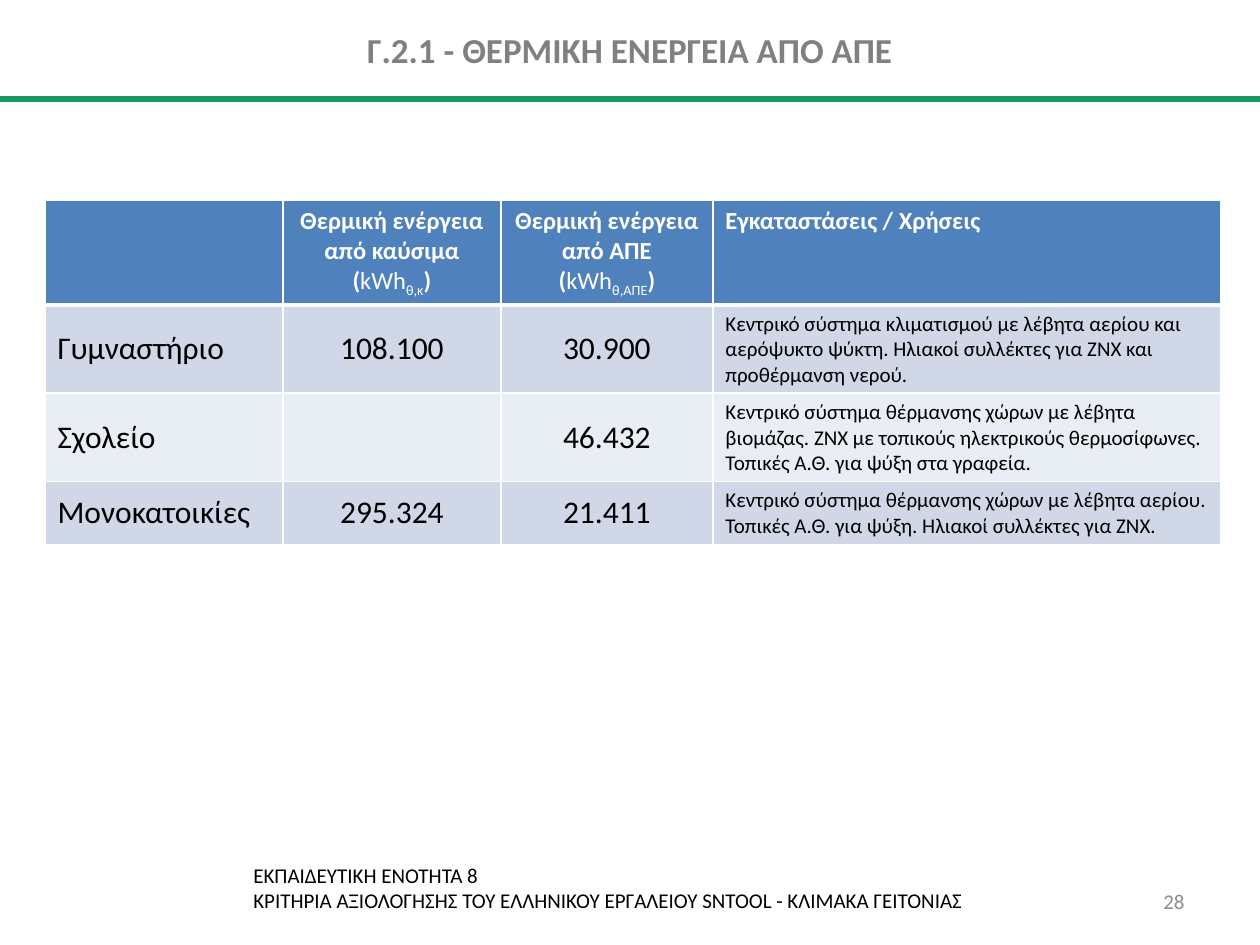
from lxml import etree
from pptx import Presentation
from pptx.dml.color import RGBColor as Rgb
from pptx.enum.shapes import MSO_CONNECTOR as Conn
from pptx.enum.text import MSO_ANCHOR as Anchor, PP_ALIGN as Align
from pptx.oxml.ns import qn
from pptx.util import Pt

PX = 914400 / 126
FONT = "Calibri"
HUES = {
    "green": "159961", "grey": "808080", "pale": "8C8C8C", "black": "000000",
    "white": "FFFFFF", "head": "4F81BD", "odd": "D0D8E8", "even": "E9EDF4",
}


def emu(px):
    return round(px * PX)


def hue(name):
    return Rgb.from_string(HUES[name])


class Deck:
    def __init__(self, wide, high):
        self.prs = Presentation()
        self.prs.slide_width, self.prs.slide_height = emu(wide), emu(high)
        self.slide = self.prs.slides.add_slide(self.prs.slide_layouts[6])

    def run(self, para, text, size, color, bold=False, base=0):
        run = para.add_run()
        run.text = text
        font = run.font
        font.name, font.size, font.bold = FONT, Pt(size), bold
        font.color.rgb = hue(color)
        if base:
            run._r.get_or_add_rPr().set("baseline", str(base * 1000))

    def text(self, box, lines, size, color, bold=False,
             align=Align.LEFT, anchor=Anchor.TOP):
        frame = self.slide.shapes.add_textbox(*map(emu, box)).text_frame
        frame.word_wrap = True
        frame.vertical_anchor = anchor
        para = frame.paragraphs[0]
        para.alignment = align
        for i, line in enumerate(lines):
            if i:
                para.add_line_break()
            self.run(para, line, size, color, bold)

    def line(self, x1, y1, x2, y2, color, width):
        line = self.slide.shapes.add_connector(
            Conn.STRAIGHT, *map(emu, (x1, y1, x2, y2)))
        line.line.color.rgb = hue(color)
        line.line.width = Pt(width)
        etree.SubElement(line._element.spPr, qn("a:effectLst"))

    def edges(self, cell, color, widths):
        props = cell._tc.get_or_add_tcPr()
        for i, (side, width) in enumerate(zip("LRTB", widths)):
            edge = etree.Element(qn(f"a:ln{side}"), w=str(Pt(width)))
            fill = etree.SubElement(edge, qn("a:solidFill"))
            etree.SubElement(fill, qn("a:srgbClr"), val=HUES[color])
            props.insert(i, edge)

    def cell(self, cell, runs, fill, widths, align, anchor):
        cell.fill.solid()
        cell.fill.fore_color.rgb = hue(fill)
        self.edges(cell, "white", widths)
        cell.vertical_anchor = anchor
        para = cell.text_frame.paragraphs[0]
        para.alignment = align
        for run in runs:
            self.run(para, *run)

    def table(self, left, top, cols, rows, heads, body):
        grid = self.slide.shapes.add_table(
            len(rows), len(cols),
            *map(emu, (left, top, sum(cols), sum(rows)))).table
        for col, wide in zip(grid.columns, cols):
            col.width = emu(wide)
        for row, high in zip(grid.rows, rows):
            row.height = emu(high)
        aligns = [Align.LEFT, Align.CENTER, Align.CENTER, Align.LEFT]
        last = len(cols) - 1
        # Header row, with a thick rule below
        for c, runs in enumerate(heads):
            self.cell(grid.cell(0, c), runs, "head", (1, 1, 1, 3),
                      aligns[c], Anchor.TOP)
        # Banded body rows
        for r, texts in enumerate(body, 1):
            fill = "odd" if r % 2 else "even"
            widths = (1, 1, 3 if r == 1 else 1, 1)
            for c, text in enumerate(texts):
                size = 12 if c == last else 18
                runs = [(text, size, "black")] if text else []
                self.cell(grid.cell(r, c), runs, fill, widths, aligns[c],
                          Anchor.TOP if c == last else Anchor.MIDDLE)


def head(text):
    return (text, 14, "white", True)


def energy(source, sub):
    return [head(f"Θερμική ενέργεια από {source} ("),
            ("kWh", 14, "white"), (sub, 14, "white", False, -25), head(")")]


def main():
    deck = Deck(1260, 945)

    # Rule and footer
    deck.line(0, 99, 1260, 99, "green", 3)
    deck.text((241, 856, 856, 63), [
        "ΕΚΠΑΙΔΕΥΤΙΚΗ ΕΝΟΤΗΤΑ 8",
        "ΚΡΙΤΗΡΙΑ ΑΞΙΟΛΟΓΗΣΗΣ ΤΟΥ ΕΛΛΗΝΙΚΟΥ ΕΡΓΑΛΕΙΟΥ SNTOOL - ΚΛΙΜΑΚΑ ΓΕΙΤΟΝΙΑΣ",
    ], 12, "black")
    deck.text((1113, 876, 84, 50), ["28"], 12, "pale",
              align=Align.RIGHT, anchor=Anchor.MIDDLE)

    # Energy table
    heads = [[], energy("καύσιμα", "θ,κ"), energy("ΑΠΕ", "θ,ΑΠΕ"),
             [head("Εγκαταστάσεις / Χρήσεις")]]
    body = [
        ("Γυμναστήριο", "108.100", "30.900",
         "Κεντρικό σύστημα κλιματισμού με λέβητα αερίου και αερόψυκτο ψύκτη. "
         "Ηλιακοί συλλέκτες για ΖΝΧ και προθέρμανση νερού."),
        ("Σχολείο", "", "46.432",
         "Κεντρικό σύστημα θέρμανσης χώρων με λέβητα βιομάζας. "
         "ΖΝΧ με τοπικούς ηλεκτρικούς θερμοσίφωνες. "
         "Τοπικές Α.Θ. για ψύξη στα γραφεία."),
        ("Μονοκατοικίες", "295.324", "21.411",
         "Κεντρικό σύστημα θέρμανσης χώρων με λέβητα αερίου. "
         "Τοπικές Α.Θ. για ψύξη. Ηλιακοί συλλέκτες για ΖΝΧ."),
    ]
    deck.table(45, 200, [238, 218, 212, 508], [104, 88, 88, 63], heads, body)

    # Title
    deck.text((0, 0, 1260, 98), ["Γ.2.1 - ΘΕΡΜΙΚΗ ΕΝΕΡΓΕΙΑ ΑΠΟ ΑΠΕ"],
              20, "grey", True, Align.CENTER, Anchor.MIDDLE)

    deck.prs.save("out.pptx")


if __name__ == "__main__":
    main()
